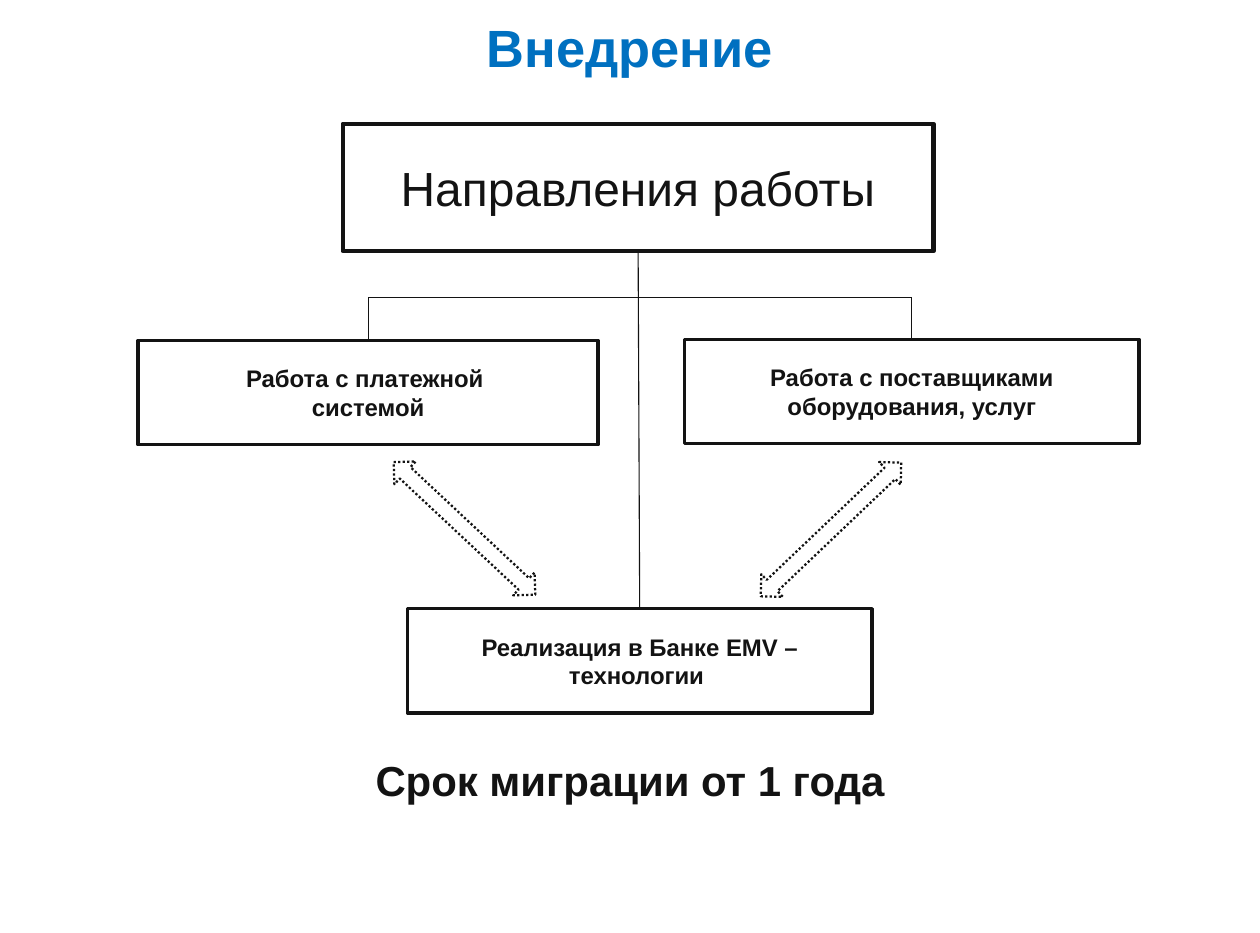
"""Build the slide on work streams of the rollout."""
from lxml import etree
from pptx import Presentation
from pptx import util as u
from pptx.dml.color import RGBColor
from pptx.enum import dml, shapes, text
from pptx.oxml.ns import qn

BLUE = RGBColor(0x00, 0x70, 0xC0)
INK = RGBColor(0x13, 0x13, 0x13)
WIDE, HIGH = 841.68, 623.52


class Chart:
    """Hold the style and the slide, and draw each kind of element."""

    font = "Arial"

    def __init__(self, slide):
        self.slide = slide

    def fill_text(self, shape, words, size, color=INK, bold=True):
        frame = shape.text_frame
        frame.text = words
        frame.word_wrap = True
        frame.vertical_anchor = text.MSO_ANCHOR.MIDDLE
        for para in frame.paragraphs:
            para.alignment = text.PP_ALIGN.CENTER
            for run in para.runs:
                run.font.name = self.font
                run.font.size = u.Pt(size)
                run.font.bold = bold
                run.font.color.rgb = color

    def title(self, words):
        head = self.slide.shapes.title
        head.left, head.top = u.Pt(0), u.Pt(0)
        head.width, head.height = u.Pt(WIDE), u.Pt(62)
        self.fill_text(head, words, 35, BLUE)

    def label(self, words, top, high, size):
        box = self.slide.shapes.add_textbox(u.Pt(0), u.Pt(top), u.Pt(WIDE), u.Pt(high))
        self.fill_text(box, words, size)

    def shape(self, kind, place, line):
        item = self.slide.shapes.add_shape(kind, *map(u.Pt, place))
        item.shadow.inherit = False
        item.fill.background()
        item.line.color.rgb = INK
        item.line.width = u.Pt(line)
        return item

    def box(self, words, place, size=16, line=2.25, bold=True):
        item = self.shape(shapes.MSO_SHAPE.RECTANGLE, place, line)
        self.fill_text(item, words, size, bold=bold)
        return item

    def arrow(self, left, top, turn):
        item = self.shape(shapes.MSO_SHAPE.LEFT_RIGHT_ARROW, (left, top, 129.6, 20.9), 1.5)
        item.rotation = turn
        item.line.dash_style = dml.MSO_LINE.ROUND_DOT

    def line(self, start, end):
        wire = self.slide.shapes.add_connector(
            shapes.MSO_CONNECTOR.STRAIGHT, *map(u.Pt, (*start, *end)))
        wire.line.color.rgb = INK
        wire.line.width = u.Pt(0.75)
        etree.SubElement(wire.element.spPr, qn("a:effectLst"))
        return wire


def main():
    deck = Presentation()
    deck.slide_width, deck.slide_height = u.Pt(WIDE), u.Pt(HIGH)
    chart = Chart(deck.slides.add_slide(deck.slide_layouts[5]))

    chart.title("Внедрение")
    head = chart.box("Направления работы", (229, 82.8, 394.6, 85), 32, 3, False)
    left = chart.box("Работа с платежной \nсистемой", (92.2, 227.5, 307.4, 69.8))
    right = chart.box("Работа с поставщиками оборудования, услуг", (457.2, 226.8, 303.8, 69.8))
    base = chart.box("Реализация в Банке EMV – технологии ", (272.2, 406.8, 310.3, 69.8))

    stem = chart.line((426.3, 167.8), (427.4, 406.8))
    stem.begin_connect(head, 2)
    stem.end_connect(base, 0)
    rail = 198.6
    ends = [(side.left + side.width / 2) / u.Pt(1) for side in (left, right)]
    for side, mid in zip((left, right), ends):
        drop = chart.line((mid, rail), (mid, side.top.pt))
        drop.end_connect(side, 0)
    chart.line((ends[0], rail), (ends[1], rail))

    chart.arrow(245.5, 342.7, 43.1)
    chart.arrow(490.3, 343.4, 136.4)
    chart.label("Срок миграции от 1 года", 499, 44, 28)
    deck.save("out.pptx")


if __name__ == "__main__":
    main()
